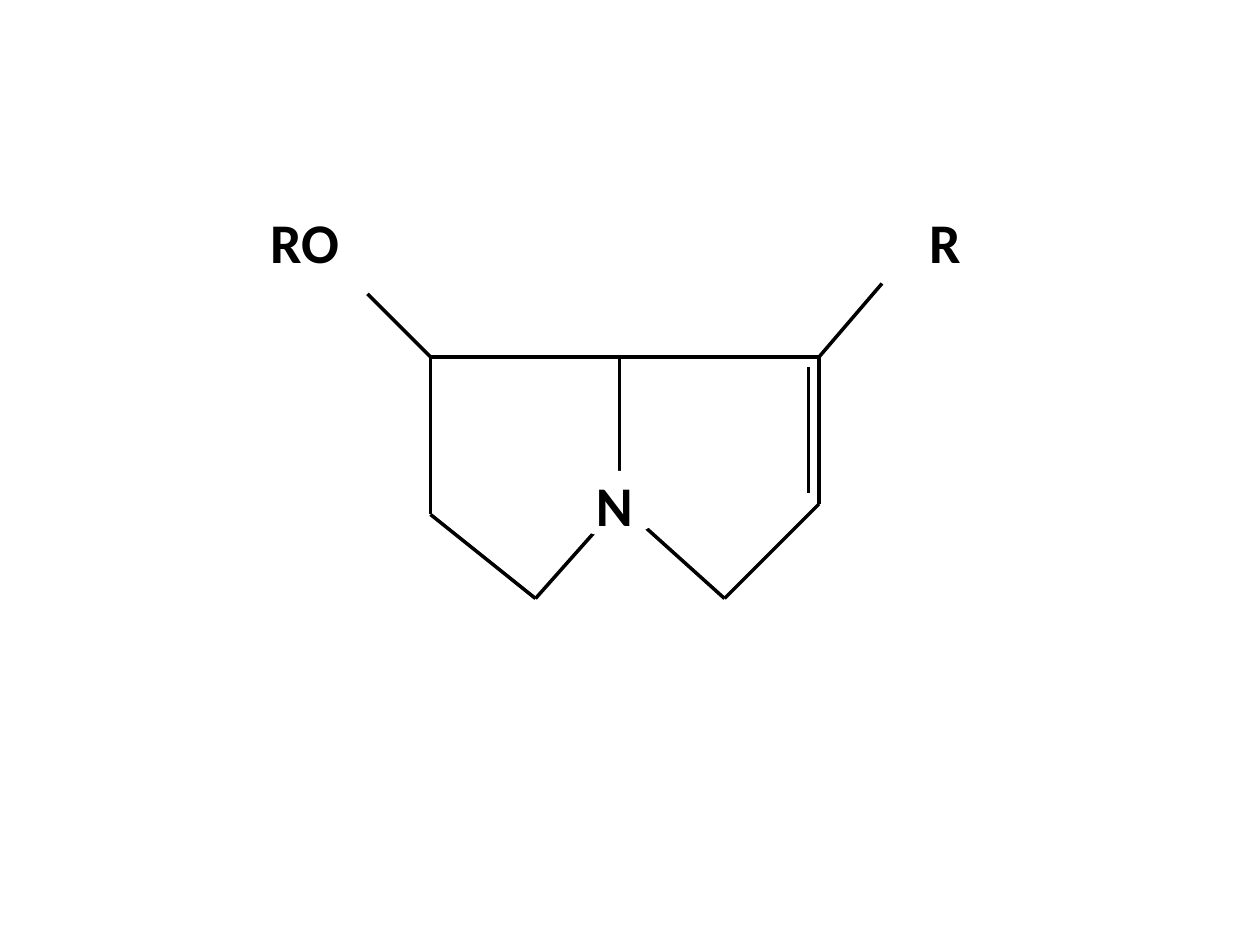
"""Build a slide with the skeletal formula of a pyrrolizidine alkaloid."""
from pptx import Presentation
from pptx.dml.color import RGBColor
from pptx.enum.shapes import MSO_CONNECTOR as Connector, MSO_SHAPE as Shape
from pptx.enum.text import MSO_ANCHOR as Anchor, PP_ALIGN as Align
from pptx.oxml.ns import qn
from pptx.util import Pt
from lxml.etree import SubElement

COLORS = {"ink": "000000", "paper": "FFFFFF"}
BOND_WIDTH = 2

ATOMS = {
    "C1": (468, 204),
    "C2": (468, 288),
    "C3": (414, 342),
    "N": (354, 288),
    "C5": (306, 342),
    "C6": (246, 294),
    "C7": (246, 204),
    "C8": (354, 204),
    "R": (504, 162),
    "RO": (210, 168),
    "inner top": (462, 210),
    "inner bottom": (462, 282),
}
BONDS = [
    ("C7", "C8"), ("C8", "C1"), ("C7", "C6"), ("C6", "C5"),
    ("C1", "C2"), ("C3", "C2"), ("C8", "N"), ("C5", "N"), ("N", "C3"),
    ("inner top", "inner bottom"), ("RO", "C7"), ("R", "C1"),
]
GROUPS = [
    ("RO", (132, 102, 84, 72)),
    ("R", (498, 102, 84, 72)),
    ("N", (324, 270, 54, 36)),
]


def rgb(name):
    return RGBColor.from_string(COLORS[name])


def add_bond(slide, start, end):
    ends = [Pt(value) for value in (*ATOMS[start], *ATOMS[end])]
    bond = slide.shapes.add_connector(Connector.STRAIGHT, *ends)
    bond.line.color.rgb = rgb("ink")
    bond.line.width = Pt(BOND_WIDTH)
    SubElement(bond._element.spPr, qn("a:effectLst"))


def write(frame, text, size=32, font="Calibri", color="ink", bold=True):
    frame.word_wrap = True
    frame.vertical_anchor = Anchor.MIDDLE
    frame.margin_left = frame.margin_right = 0
    paragraph = frame.paragraphs[0]
    paragraph.alignment = Align.CENTER
    run = paragraph.add_run()
    run.text = text
    run.font.size = Pt(size)
    run.font.name = font
    run.font.bold = bold
    run.font.color.rgb = rgb(color)


def add_group(slide, label, box):
    group = slide.shapes.add_shape(Shape.OVAL, *map(Pt, box))
    group.shadow.inherit = False
    group.fill.solid()
    group.fill.fore_color.rgb = rgb("paper")
    group.line.color.rgb = rgb("paper")
    group.line.width = Pt(BOND_WIDTH)
    write(group.text_frame, label)


def main():
    deck = Presentation()
    deck.slide_width, deck.slide_height = Pt(720), Pt(540)
    slide = deck.slides.add_slide(deck.slide_layouts[6])
    for start, end in BONDS:
        add_bond(slide, start, end)
    for label, box in GROUPS:
        add_group(slide, label, box)
    deck.save("out.pptx")


if __name__ == "__main__":
    main()
